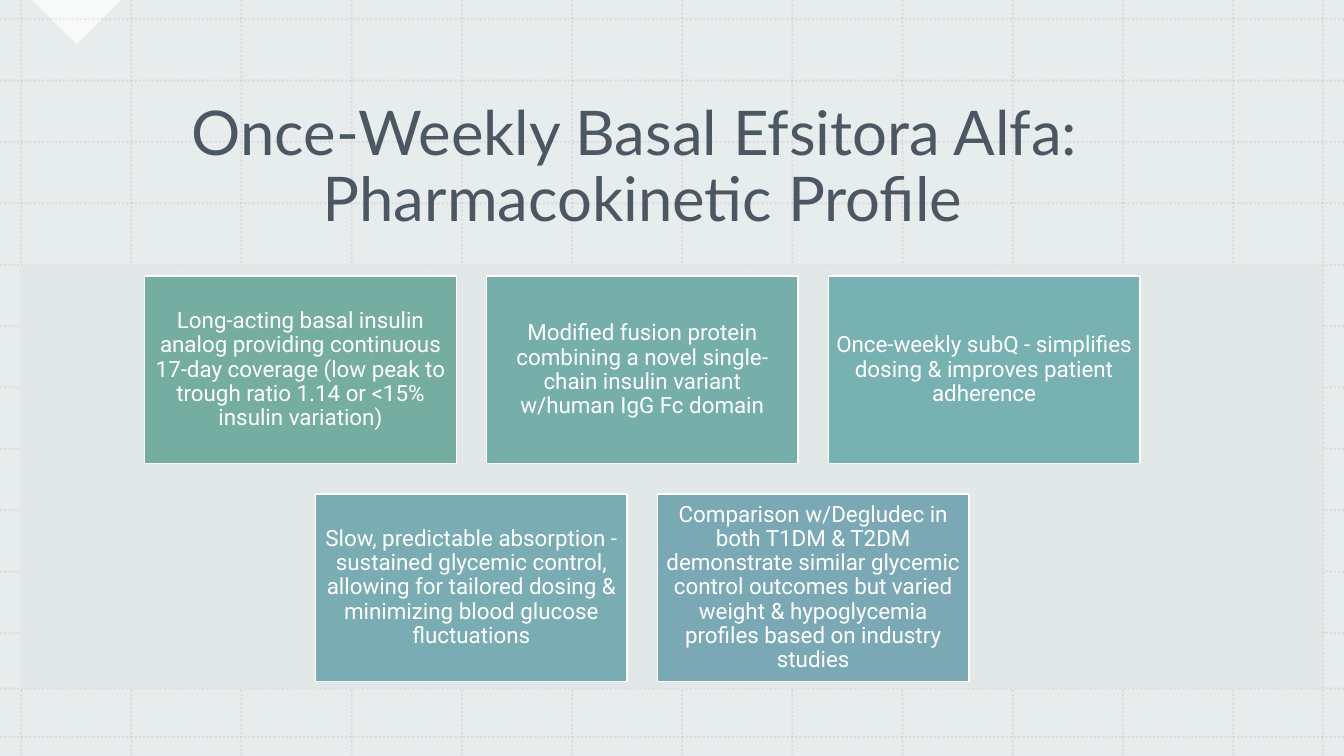
"""Build the pharmacokinetic profile slide for once-weekly basal efsitora alfa."""
from pptx import Presentation
from pptx.dml.color import RGBColor
from pptx.enum import dml, shapes, text
from pptx.oxml import ns, xmlchemy
from pptx.util import Inches, Pt

WHITE = RGBColor(0xFF, 0xFF, 0xFF)
MIST = RGBColor(0xE2, 0xE8, 0xE8)
ROSE = RGBColor(0xC7, 0x96, 0xA6)
NAVY = RGBColor(0x24, 0x34, 0x41)

TITLE = "Once-Weekly Basal Efsitora Alfa: \vPharmacokinetic Profile"
CARD_ROWS = [
    [
        ("Long-acting basal insulin analog providing continuous 17-day coverage "
         "(low peak to trough ratio 1.14 or <15% insulin variation)", RGBColor(0x75, 0xAD, 0xA1)),
        ("Modified fusion protein combining a novel single-chain insulin variant "
         "w/human IgG Fc domain", RGBColor(0x76, 0xAF, 0xA9)),
        ("Once-weekly subQ - simplifies dosing & improves patient adherence",
         RGBColor(0x77, 0xB1, 0xB1)),
    ],
    [
        ("Slow, predictable absorption - sustained glycemic control, allowing for "
         "tailored dosing & minimizing blood glucose fluctuations", RGBColor(0x79, 0xAD, 0xB3)),
        ("Comparison w/Degludec in both T1DM & T2DM demonstrate similar glycemic "
         "control outcomes but varied weight & hypoglycemia profiles based on "
         "industry studies", RGBColor(0x7A, 0xA9, 0xB5)),
    ],
]

SLIDE_WIDTH, SLIDE_HEIGHT = 13.33, 7.5
FIRST_COLUMN, LAST_COLUMN, COLUMN_STEPS = 0.21, 12.23, 11
FIRST_ROW, LAST_ROW, ROW_STEPS = 0.19, 6.28, 10
EDGE_COLUMN, EDGE_ROWS = 13.12, [6.83, 7.31]
CARD_WIDTH, CARD_HEIGHT, CARD_GAP = 3.09, 1.86, 0.3
CARDS_TOP, CARDS_CENTER = 2.74, 6.37


def set_alpha(shape, percent):
    """Make every colour of a shape partly transparent."""
    for color in shape._element.iter(ns.qn("a:srgbClr")):
        alpha = xmlchemy.OxmlElement("a:alpha")
        alpha.set("val", str(percent * 1000))
        color.append(alpha)


def add_block(slide, box, fill, kind=shapes.MSO_SHAPE.RECTANGLE):
    """Add a filled shape without outline or shadow."""
    shape = slide.shapes.add_shape(kind, *map(Inches, box))
    shape.shadow.inherit = False
    shape.fill.solid()
    shape.fill.fore_color.rgb = fill
    shape.line.fill.background()
    return shape


def add_grid_line(slide, start, end):
    """Add one faint dotted line."""
    line = slide.shapes.add_connector(
        shapes.MSO_CONNECTOR.STRAIGHT, *map(Inches, start + end))
    line.line.color.rgb = ROSE
    line.line.width = Pt(1.5)
    line.line.dash_style = dml.MSO_LINE.ROUND_DOT
    line._element.spPr.append(xmlchemy.OxmlElement("a:effectLst"))
    set_alpha(line, 20)


def write(shape, content, font, size, color, margin=None):
    """Write centred text into a shape."""
    frame = shape.text_frame
    frame.word_wrap = True
    frame.vertical_anchor = text.MSO_ANCHOR.MIDDLE
    if margin is not None:
        frame.margin_left = frame.margin_right = Inches(margin)
        frame.margin_top = frame.margin_bottom = Inches(margin)
    paragraph = frame.paragraphs[0]
    paragraph.text = content
    paragraph.alignment = text.PP_ALIGN.CENTER
    paragraph.line_spacing = 0.9
    for run in paragraph.runs:
        run.font.name = font
        run.font.size = Pt(size)
        run.font.color.rgb = color


def add_background(slide):
    """Add the tint, the corner triangle and the dotted grid."""
    set_alpha(add_block(slide, (0, 0, SLIDE_WIDTH, SLIDE_HEIGHT), MIST), 80)
    corner = add_block(slide, (0.45, -0.31, 0.62, 0.62), WHITE,
                       shapes.MSO_SHAPE.RIGHT_TRIANGLE)
    corner.rotation = 315
    set_alpha(corner, 75)
    column_pitch = (LAST_COLUMN - FIRST_COLUMN) / COLUMN_STEPS
    row_pitch = (LAST_ROW - FIRST_ROW) / ROW_STEPS
    columns = [FIRST_COLUMN + i * column_pitch for i in range(COLUMN_STEPS + 1)]
    rows = [FIRST_ROW + i * row_pitch for i in range(ROW_STEPS + 1)]
    for x in columns + [EDGE_COLUMN]:
        add_grid_line(slide, (x, 0), (x, SLIDE_HEIGHT))
    for y in rows + EDGE_ROWS:
        add_grid_line(slide, (0, y), (SLIDE_WIDTH, y))


def add_cards(slide):
    """Add the panel and its centred rows of cards."""
    add_block(slide, (0.2, 2.63, 12.91, 4.2), MIST)
    for row, cards in enumerate(CARD_ROWS):
        pitch = CARD_WIDTH + CARD_GAP
        left = CARDS_CENTER - (len(cards) * pitch - CARD_GAP) / 2
        top = CARDS_TOP + row * (CARD_HEIGHT + CARD_GAP)
        for column, (content, fill) in enumerate(cards):
            box = (left + column * pitch, top, CARD_WIDTH, CARD_HEIGHT)
            card = add_block(slide, box, fill)
            card.line.color.rgb = WHITE
            card.line.width = Pt(1)
            write(card, content, font="Roboto", size=16, color=WHITE, margin=0.07)


def main():
    """Assemble and save the slide."""
    presentation = Presentation()
    presentation.slide_width = Inches(SLIDE_WIDTH)
    presentation.slide_height = Inches(SLIDE_HEIGHT)
    slide = presentation.slides.add_slide(presentation.slide_layouts[6])
    add_background(slide)
    title = slide.shapes.add_textbox(*map(Inches, (0.5, 0.79, 11.75, 1.76)))
    write(title, TITLE, font="Lato", size=44, color=NAVY)
    set_alpha(title, 80)
    add_cards(slide)
    presentation.save("out.pptx")


if __name__ == "__main__":
    main()
